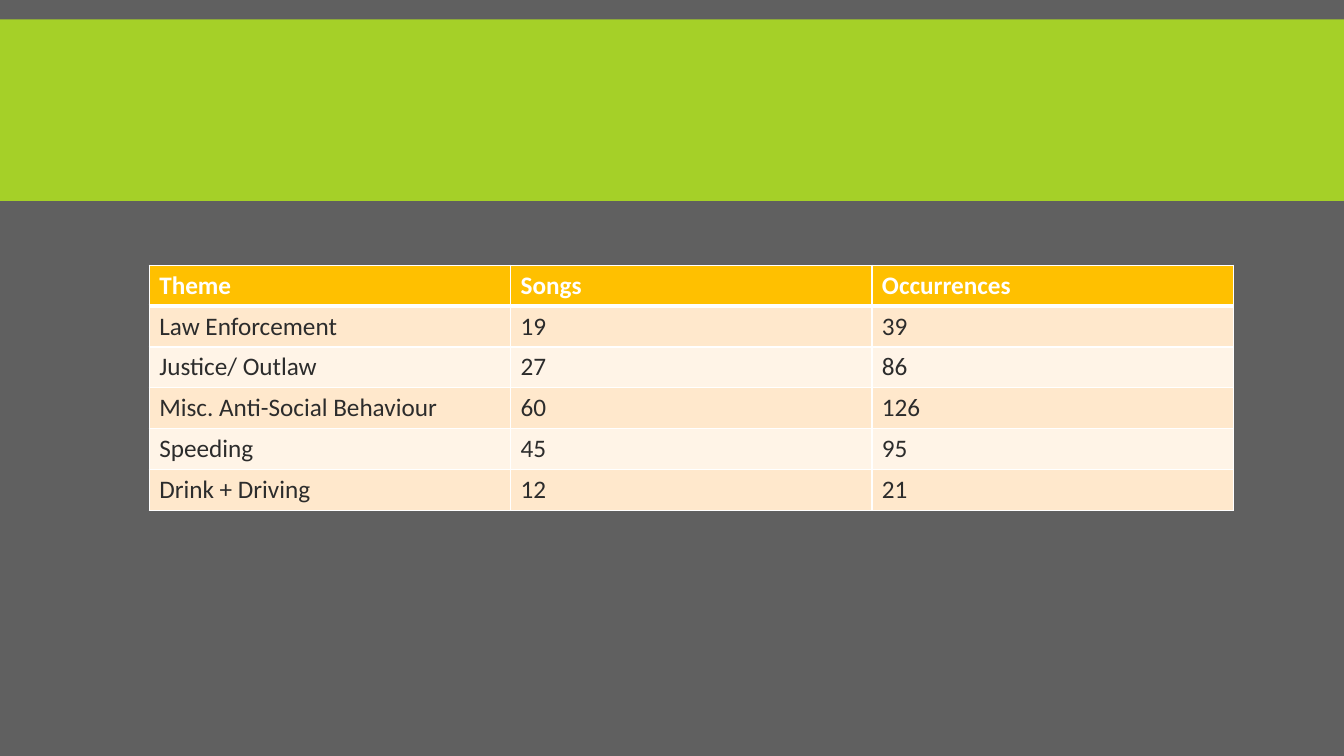
from lxml import etree
from pptx import Presentation
from pptx.dml.color import RGBColor
from pptx.enum.shapes import MSO_SHAPE
from pptx.oxml.ns import qn
from pptx.util import Pt

RECT = MSO_SHAPE.RECTANGLE

ROWS = [
    ("Theme", "Songs", "Occurrences"),
    ("Law Enforcement", 19, 39),
    ("Justice/ Outlaw", 27, 86),
    ("Misc. Anti-Social Behaviour", 60, 126),
    ("Speeding", 45, 95),
    ("Drink + Driving", 12, 21),
]
COLORS = {
    "back": "606060", "band": "A5D028", "head": "FFC000",
    "odd": "FFE8CC", "even": "FFF4E7", "ink": "2C2C2C", "white": "FFFFFF",
}
WIDE, HIGH = 960, 540
LEFT, TOP = 106.6, 189.4
COL, ROW = 258.1, 29.2


def paint(fill, name):
    fill.solid()
    fill.fore_color.rgb = RGBColor.from_string(COLORS[name])


def write(frame, text, size=18, color="ink", bold=False):
    run = frame.paragraphs[0].add_run()
    run.text = str(text)
    run.font.name = "Calibri"
    run.font.size = Pt(size)
    run.font.bold = bold
    run.font.color.rgb = RGBColor.from_string(COLORS[color])


def edge(cell, widths):
    props = cell._tc.get_or_add_tcPr()
    for side, width in zip("LRTB", widths):
        line = etree.SubElement(props, qn("a:ln" + side), w=str(Pt(width)))
        fill = etree.SubElement(line, qn("a:solidFill"))
        etree.SubElement(fill, qn("a:srgbClr"), val=COLORS["white"])


def main():
    deck = Presentation()
    deck.slide_width, deck.slide_height = Pt(WIDE), Pt(HIGH)
    slide = deck.slides.add_slide(deck.slide_layouts[6])
    paint(slide.background.fill, "back")

    band = slide.shapes.add_shape(RECT, 0, Pt(13.9), Pt(WIDE), Pt(129.6))
    band.shadow.inherit = False
    paint(band.fill, "band")
    band.line.fill.background()

    count, cols = len(ROWS), len(ROWS[0])
    table = slide.shapes.add_table(
        count, cols, Pt(LEFT), Pt(TOP), Pt(COL * cols), Pt(ROW * count)
    ).table
    for col in table.columns:
        col.width = Pt(COL)
    for i, row in enumerate(ROWS):
        table.rows[i].height = Pt(ROW)
        head = i == 0
        shade = "head" if head else "odd" if i % 2 else "even"
        for j, text in enumerate(row):
            cell = table.cell(i, j)
            edge(cell, (1, 1, 3 if i == 1 else 1, 3 if head else 1))
            paint(cell.fill, shade)
            write(cell.text_frame, text, color="white" if head else "ink", bold=head)

    deck.save("out.pptx")


if __name__ == "__main__":
    main()
